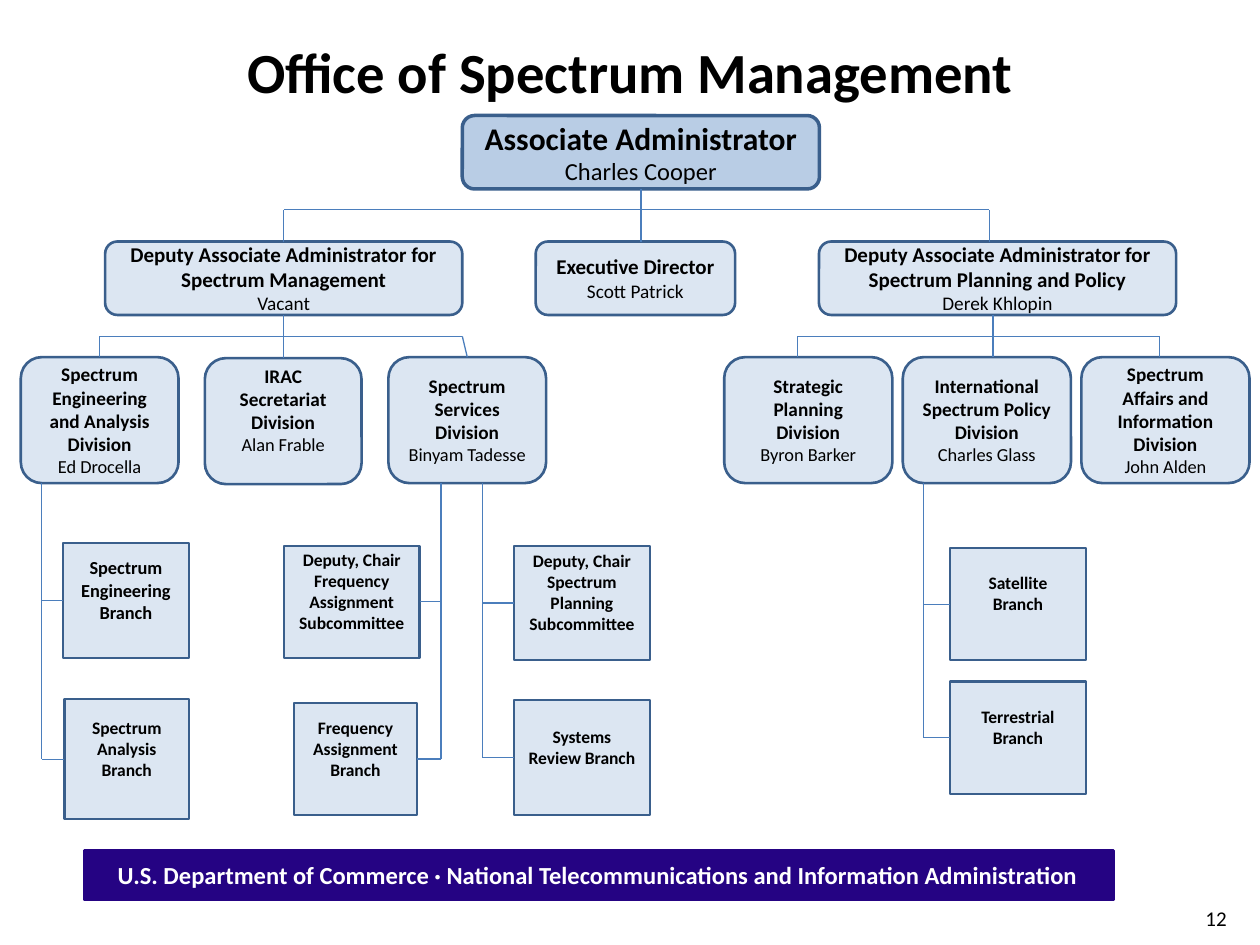
import pptx
import pptx.util
import pptx.dml.color
import pptx.enum.shapes
import pptx.enum.text
import pptx.oxml.ns
from lxml import etree

Cm, Pt = pptx.util.Cm, pptx.util.Pt
RGB = pptx.dml.color.RGBColor
SHAPE = pptx.enum.shapes.MSO_SHAPE
ALIGN = pptx.enum.text.PP_ALIGN
ANCHOR = pptx.enum.text.MSO_ANCHOR

BLACK, WHITE = RGB(0, 0, 0), RGB(0xFF, 0xFF, 0xFF)
INDIGO = RGB(0x25, 0x03, 0x83)
STEEL = RGB(0x3A, 0x5F, 0x8C)
LINK = RGB(0x4B, 0x7E, 0xBC)
BLUE, PALE = RGB(0xB9, 0xCD, 0xE5), RGB(0xDC, 0xE6, 0xF2)

TOP, LEFT, BOTTOM, RIGHT = range(4)
ROUND, RECT = SHAPE.ROUNDED_RECTANGLE, SHAPE.RECTANGLE

# Box styles by rank in the chart
HEAD = dict(kind=ROUND, fill=BLUE, line=2, sizes=(18, 14))
DEPUTY = dict(kind=ROUND, fill=PALE, line=1.5, sizes=(12, 11))
DIVISION = dict(kind=ROUND, fill=PALE, line=1.5, sizes=(11, 10.5))
BRANCH = dict(kind=RECT, fill=PALE, line=1.25, sizes=(10,), lift=0.43)


def write(p, text, align=ALIGN.CENTER, **font):
    """Put one formatted run in a paragraph."""
    p.alignment = align
    r = p.add_run()
    r.text = text
    color = font.pop("color", BLACK)
    for name, value in {"name": "Calibri", "bold": False, **font}.items():
        setattr(r.font, name, value)
    r.font.color.rgb = color


def add_box(s, origin, x, y, w, h, lines, kind, fill, line, sizes, lift=0):
    """Box with a bold name and, below it, the person; lift raises the text."""
    sp = s.shapes.add_shape(kind, Cm(origin[0] + x), Cm(origin[1] + y), Cm(w), Cm(h))
    sp.shadow.inherit = False
    sp.fill.solid()
    sp.fill.fore_color.rgb = fill
    sp.line.color.rgb = STEEL
    sp.line.width = Pt(line)
    tf = sp.text_frame
    tf.word_wrap = True
    tf.vertical_anchor = ANCHOR.MIDDLE
    tf.margin_bottom = Cm(0.13 + lift)
    for i, (text, size) in enumerate(zip(lines, sizes)):
        p = tf.add_paragraph() if i else tf.paragraphs[0]
        write(p, text, size=Pt(size), bold=i == 0)
    return sp


def add_link(s, x1, y1, x2, y2, box=None, side=None):
    """Thin line in EMU; its start is joined to a side of box, if given."""
    c = s.shapes.add_connector(
        pptx.enum.shapes.MSO_CONNECTOR.STRAIGHT, *map(int, (x1, y1, x2, y2)))
    c.line.color.rgb = LINK
    c.line.width = Pt(0.75)
    etree.SubElement(c._element.spPr, pptx.oxml.ns.qn("a:effectLst"))
    if box is not None:
        c.begin_connect(box, side)


def add_bus(s, origin, y, stubs):
    """Horizontal bus; each stub is (box, side, x, joined), x None for the centre."""
    y = Cm(origin[1] + y)
    xs = []
    for box, side, x, joined in stubs:
        centre = box.left + box.width // 2
        x = centre if x is None else Cm(origin[0] + x)
        xs.append(x)
        edge = box.top if side == TOP else box.top + box.height
        add_link(s, x, edge, x, y, *((box, side) if joined else ()))
    add_link(s, min(xs), y, max(xs), y)


def add_rail(s, origin, x, division, branches, side):
    """Vertical rail under a division, with a tick to a side of each branch."""
    x = Cm(origin[0] + x)
    for b in branches:
        mid = b.top + b.height // 2
        add_link(s, b.left if side == LEFT else b.left + b.width, mid, x, mid, b, side)
    add_link(s, x, division.top + division.height, x, mid)


def management_wing(s, o):
    deputy = add_box(s, o, 1.7, 0, 7.2, 1.48, (
        "Deputy Associate Administrator for Spectrum Management", "Vacant"), **DEPUTY)
    # Divisions
    engineering = add_box(s, o, 0, 2.33, 3.18, 2.54, (
        "Spectrum Engineering and Analysis Division", "Ed Drocella"), **DIVISION)
    irac = add_box(s, o, 3.71, 2.35, 3.16, 2.54, (
        "IRAC Secretariat Division", "Alan Frable"), lift=0.45, **DIVISION)
    services = add_box(s, o, 7.41, 2.33, 3.18, 2.54, (
        "Spectrum Services Division", "Binyam Tadesse"), **DIVISION)
    add_bus(s, o, 1.91, [(deputy, BOTTOM, None, True), (engineering, TOP, None, True),
                         (irac, TOP, None, True), (services, TOP, 8.9, True)])
    # Branches: rail x, division, side, boxes
    for x, division, side, boxes in (
        (0.42, engineering, LEFT, (
            (0.85, 6.08, 2.54, 2.31, "Spectrum Engineering Branch", 10.5),
            (0.88, 9.23, 2.51, 2.41, "Spectrum Analysis Branch", 10))),
        (8.47, services, RIGHT, (
            (5.3, 6.13, 2.74, 2.26, "Deputy, Chair Frequency Assignment Subcommittee", 10),
            (5.5, 9.3, 2.49, 2.26, "Frequency Assignment Branch", 10))),
        (9.31, services, LEFT, (
            (9.94, 6.13, 2.74, 2.31, "Deputy, Chair Spectrum Planning Subcommittee", 10),
            (9.94, 9.25, 2.74, 2.31, "Systems Review Branch", 10))),
    ):
        branches = [add_box(s, o, *place, (text,), **{**BRANCH, "sizes": (size,)})
                    for *place, text, size in boxes]
        add_rail(s, o, x, division, branches, side)
    return deputy


def policy_wing(s, o):
    deputy = add_box(s, o, 1.91, 0, 7.2, 1.48, (
        "Deputy Associate Administrator for Spectrum Planning and Policy",
        "Derek Khlopin"), **DEPUTY)
    # Divisions
    planning, international, affairs = [
        add_box(s, o, 3.6 * i, 2.33, 3.39, 2.54, lines, **DIVISION)
        for i, lines in enumerate((
            ("Strategic Planning Division", "Byron Barker"),
            ("International Spectrum Policy Division", "Charles Glass"),
            ("Spectrum Affairs and Information Division", "John Alden")))]
    add_bus(s, o, 1.91, [(deputy, BOTTOM, 5.42, False), (planning, TOP, 1.48, False),
                         (international, TOP, 5.42, False), (affairs, TOP, 8.77, False)])
    # Branches
    branches = [add_box(s, o, 4.55, 6.18 + 2.69 * i, 2.74, 2.26, (text,), **BRANCH)
                for i, text in enumerate(("Satellite Branch", "Terrestrial Branch"))]
    add_rail(s, o, 4.02, international, branches, LEFT)
    return deputy


def executive_row(s, o, management, policy):
    head = add_box(s, o, 7.2, 0, 7.2, 1.48, (
        "Associate Administrator", "Charles Cooper"), **HEAD)
    director = add_box(s, o, 8.68, 2.54, 4.02, 1.48, (
        "Executive Director", "Scott Patrick"), **DEPUTY)
    add_bus(s, o, 1.9, [(head, BOTTOM, None, True), (management, TOP, None, True),
                        (director, TOP, 10.8, False), (policy, TOP, 17.82, False)])


def title_area(s, x, y, w, h):
    sp = s.shapes.title
    sp.left, sp.top, sp.width, sp.height = Cm(x), Cm(y), Cm(w), Cm(h)
    tf = sp.text_frame
    tf.auto_size = pptx.enum.text.MSO_AUTO_SIZE.NONE
    tf.vertical_anchor = ANCHOR.MIDDLE
    write(tf.paragraphs[0], "Office of Spectrum Management", size=Pt(32.4), bold=True)


def add_label(s, x, y, w, h, text, align, **font):
    tf = s.shapes.add_textbox(Cm(x), Cm(y), Cm(w), Cm(h)).text_frame
    tf.word_wrap = True
    tf.vertical_anchor = ANCHOR.MIDDLE
    write(tf.paragraphs[0], text, align, **font)


def footer(s, x, y, w, h):
    bar = s.shapes.add_shape(RECT, Cm(x), Cm(y), Cm(w), Cm(h))
    bar.shadow.inherit = False
    bar.fill.solid()
    bar.fill.fore_color.rgb = bar.line.color.rgb = INDIGO
    bar.line.width = Pt(2)
    add_label(s, x + 0.42, y + 0.05, 20.12, 0.86,
              "U.S. Department of Commerce · National Telecommunications"
              " and Information Administration",
              ALIGN.LEFT, size=Pt(14), bold=True, color=WHITE)
    # Slide number
    add_label(s, x + 17.35, y + 0.84, 5.93, 1.02, "12", ALIGN.RIGHT, size=Pt(12))


def main():
    prs = pptx.Presentation()
    prs.slide_width, prs.slide_height = Cm(25.4), Cm(19.05)
    s = prs.slides.add_slide(prs.slide_layouts[5])
    title_area(s, 0, 0.48, 25.4, 1.9)
    management = management_wing(s, (0.42, 4.87))
    policy = policy_wing(s, (14.6, 4.87))
    executive_row(s, (2.12, 2.33), management, policy)
    footer(s, 1.7, 17.15, 20.75, 0.97)
    prs.save("out.pptx")


if __name__ == "__main__":
    main()
